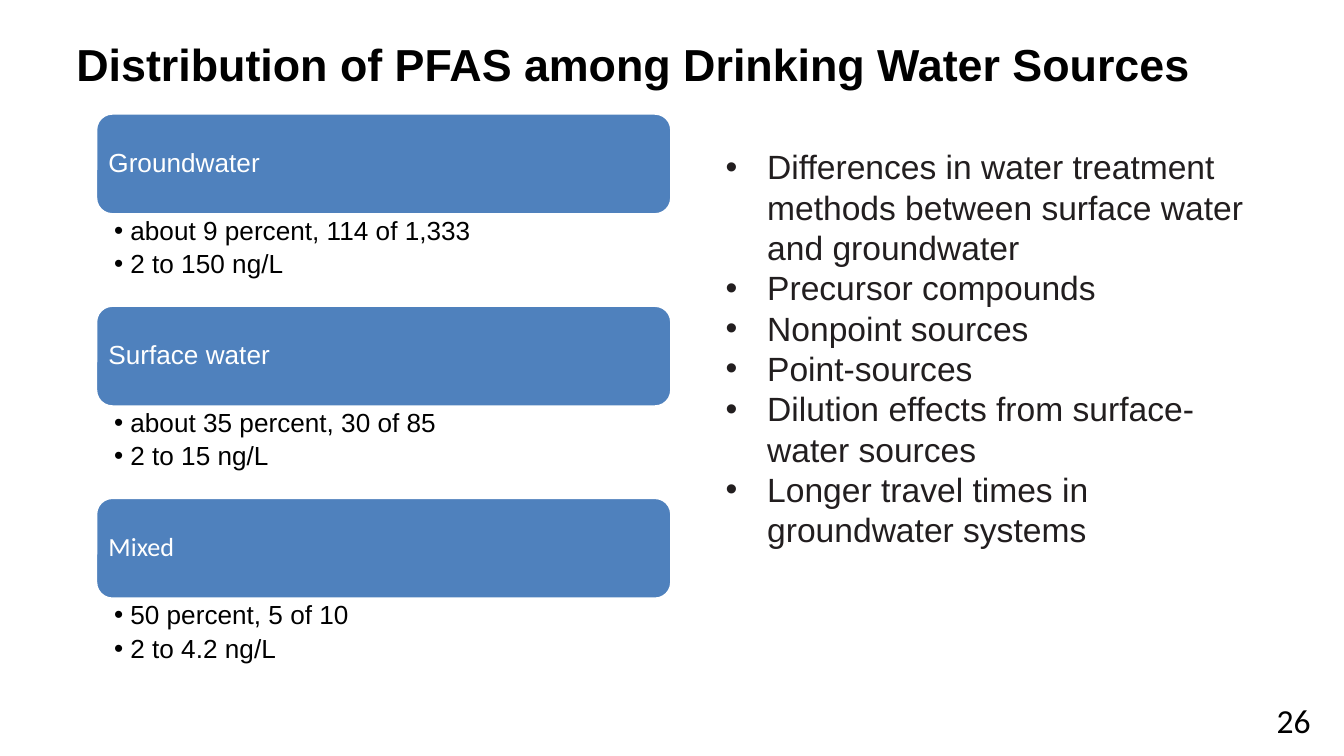
"""Build a slide on how PFAS is spread among drinking water sources."""
import pptx
import pptx.util
import pptx.dml.color
import pptx.enum.shapes
import pptx.enum.text
import pptx.oxml.ns
import lxml.etree

TITLE = "Distribution of PFAS among Drinking Water Sources"
SOURCES = [
    ("Groundwater", "Arial", ["about 9 percent, 114 of 1,333", "2 to 150 ng/L"]),
    ("Surface water", "Arial", ["about 35 percent, 30 of 85", "2 to 15 ng/L"]),
    ("Mixed", "Calibri", ["50 percent, 5 of 10", "2 to 4.2 ng/L"]),
]
CAUSES = [
    "Differences in water treatment methods between surface water and groundwater",
    "Precursor compounds",
    "Nonpoint sources",
    "Point-sources",
    "Dilution effects from surface-water sources",
    "Longer travel times in groundwater systems",
]
PAGE = "26"
COLORS = {"black": "000000", "ink": "221E1F", "blue": "4F81BD", "white": "FFFFFF"}
WIDE = 10
HIGH = WIDE * 9 / 16
LEFT, TOP, SPAN = 0.71, 0.84, 4.29
BAR, NOTE = 0.76, 0.67

Inch = pptx.util.Inches
Pt = pptx.util.Pt


def color(name):
    return pptx.dml.color.RGBColor.from_string(COLORS[name])


def write(shape, lines, size=18, font="Arial", ink="black", bold=False, hang=0,
          pad=(0.1, 0.05, 0.1, 0.05), lead=None, after=0, level=0, middle=False):
    frame = shape.text_frame
    frame.word_wrap = True
    anchor = pptx.enum.text.MSO_ANCHOR
    frame.vertical_anchor = anchor.MIDDLE if middle else anchor.TOP
    frame.margin_left, frame.margin_top, frame.margin_right, frame.margin_bottom = map(Inch, pad)
    for i, line in enumerate(lines):
        para = frame.add_paragraph() if i else frame.paragraphs[0]
        para.alignment = pptx.enum.text.PP_ALIGN.LEFT
        para.level = level
        para.space_after = Pt(after)
        if lead:
            para.line_spacing = lead
        if hang:
            props = para._p.get_or_add_pPr()
            props.set("marL", str(Inch(hang)))
            props.set("indent", str(-Inch(hang)))
            tag = pptx.oxml.ns.qn
            lxml.etree.SubElement(props, tag("a:buFont")).set("typeface", "Arial")
            lxml.etree.SubElement(props, tag("a:buChar")).set("char", "•")
        run = para.add_run()
        run.text = line
        run.font.size, run.font.name, run.font.bold = Pt(size), font, bold
        run.font.color.rgb = color(ink)


deck = pptx.Presentation()
deck.slide_width, deck.slide_height = Inch(WIDE), Inch(HIGH)
slide = deck.slides.add_slide(deck.slide_layouts[6])


def box(*place):
    return slide.shapes.add_textbox(*map(Inch, place))


write(box(0.47, 0.22, 8.97, 0.91), [TITLE], size=24, bold=True)
write(box(5.3, 1.04, SPAN, 3.13), CAUSES, ink="ink", hang=0.31)

for row, (name, font, facts) in enumerate(SOURCES):
    top = TOP + row * (BAR + NOTE)
    bar = slide.shapes.add_shape(pptx.enum.shapes.MSO_SHAPE.ROUNDED_RECTANGLE,
                                 *map(Inch, (LEFT, top, SPAN, BAR)))
    bar.shadow.inherit = False
    bar.fill.solid()
    bar.fill.fore_color.rgb = color("blue")
    bar.line.color.rgb = color("white")
    bar.line.width = Pt(2)
    write(bar, [name], size=14, font=font, ink="white", pad=(0.06,) * 4, lead=0.9, middle=True)
    write(box(LEFT, top + BAR, SPAN, NOTE), facts, size=14, hang=0.12,
          pad=(0.14, 0.02, 0.11, 0.02), lead=0.9, after=2.8, level=1)

write(box(9.4, 5.16, 0.76, 0.4), [PAGE], font="Calibri")
deck.save("out.pptx")
